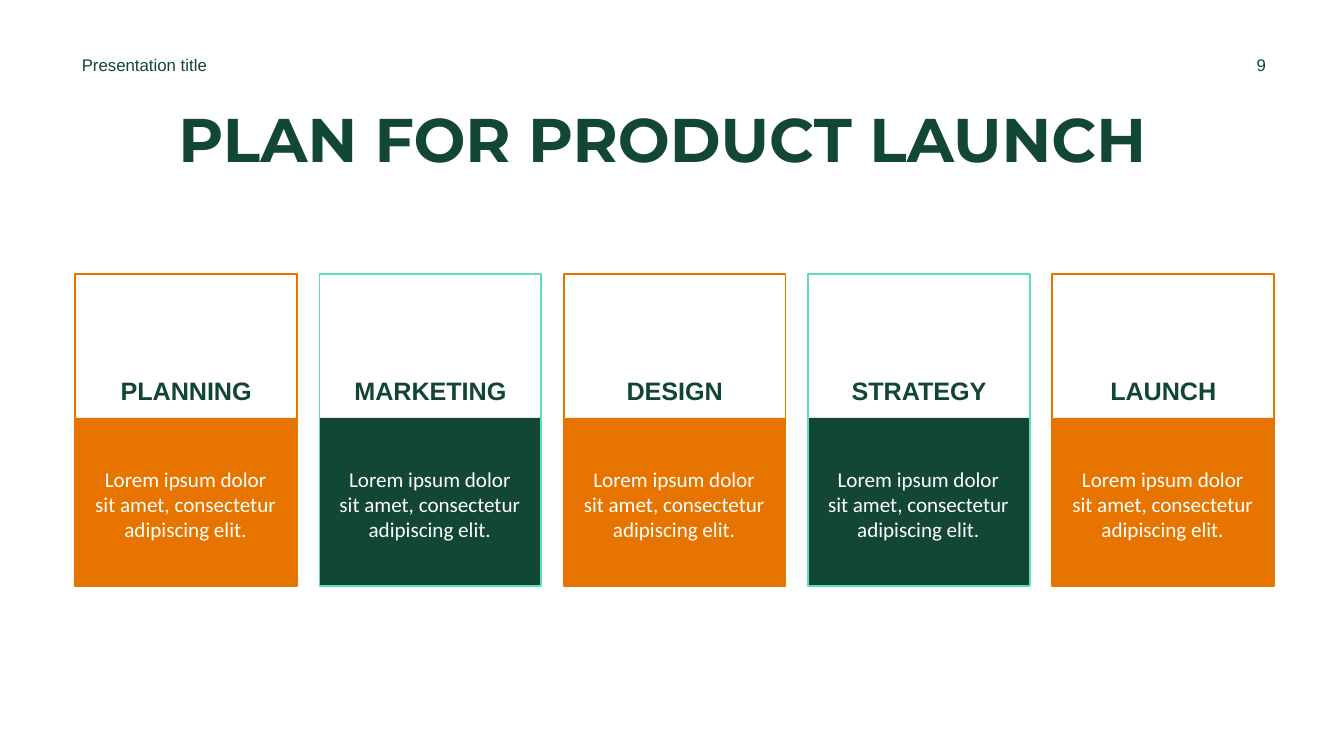
"""Build a five-stage product launch plan slide."""
import pptx
import pptx.dml.color
import pptx.enum.shapes
import pptx.enum.text
import pptx.util

Inches = pptx.util.Inches
Anchor = pptx.enum.text.MSO_ANCHOR
Align = pptx.enum.text.PP_ALIGN
RECTANGLE = pptx.enum.shapes.MSO_SHAPE.RECTANGLE
ORANGE, GREEN, MINT, TEXT_GREEN, WHITE = "E87400", "124734", "5EDFB6", "124633", "FFFFFF"


def color(value):
    return pptx.dml.color.RGBColor.from_string(value)


def write(shape, text, size, font, text_color, align=Align.CENTER, anchor=Anchor.MIDDLE, bold=False, top=0.05):
    frame = shape.text_frame
    frame.word_wrap = True
    frame.auto_size = pptx.enum.text.MSO_AUTO_SIZE.NONE
    frame.vertical_anchor = anchor
    frame.margin_left = frame.margin_right = Inches(0.1)
    frame.margin_top, frame.margin_bottom = Inches(top), Inches(0.05)
    paragraph = frame.paragraphs[0]
    paragraph.alignment = align
    run = paragraph.add_run()
    run.text = text
    run.font.size = pptx.util.Pt(size)
    run.font.name = font
    run.font.bold = bold
    run.font.color.rgb = color(text_color)


presentation = pptx.Presentation()
presentation.slide_width, presentation.slide_height = Inches(10), Inches(10 * 9 / 16)
slide = presentation.slides.add_slide(presentation.slide_layouts[5])
shapes = slide.shapes

title = shapes.title
title.left, title.top, title.width, title.height = Inches(0.62), Inches(0.69), Inches(8.75), Inches(0.63)
write(title, "PLAN FOR PRODUCT LAUNCH ", 33, "Montserrat", GREEN, anchor=Anchor.TOP, bold=True, top=0.06)

header = shapes.add_textbox(Inches(0.51), Inches(0.37), Inches(2.62), Inches(0.23))
write(header, "Presentation title", 9, "Arial", TEXT_GREEN, align=Align.LEFT)
page_number = shapes.add_textbox(Inches(8.98), Inches(0.37), Inches(0.81), Inches(0.23))
write(page_number, "9", 9, "Arial", TEXT_GREEN)

first_left, last_left, card_width = 0.56, 7.83, 1.65
stages = ["PLANNING", "MARKETING", "DESIGN", "STRATEGY", "LAUNCH"]
pitch = (last_left - first_left) / (len(stages) - 1)

for index, stage in enumerate(stages):
    left = first_left + index * pitch
    panel_color, border_color = [(ORANGE, ORANGE), (GREEN, MINT)][index % 2]

    panel = shapes.add_shape(RECTANGLE, Inches(left), Inches(3.11), Inches(card_width), Inches(1.25))
    panel.shadow.inherit = False
    panel.fill.solid()
    panel.fill.fore_color.rgb = color(panel_color)
    panel.line.fill.background()

    card = shapes.add_shape(RECTANGLE, Inches(left), Inches(2.04), Inches(card_width), Inches(2.32))
    card.shadow.inherit = False
    card.fill.background()
    card.line.color.rgb = color(border_color)
    card.line.width = pptx.util.Pt(1)
    write(card, stage, 13.5, "Arial", TEXT_GREEN, anchor=Anchor.TOP, bold=True, top=0.75)

    description = shapes.add_textbox(Inches(left + 0.04), Inches(3.19), Inches(1.56), Inches(1.12))
    write(description, "Lorem ipsum dolor sit amet, consectetur adipiscing elit.", 11.25, "Calibri", WHITE)

presentation.save("out.pptx")
